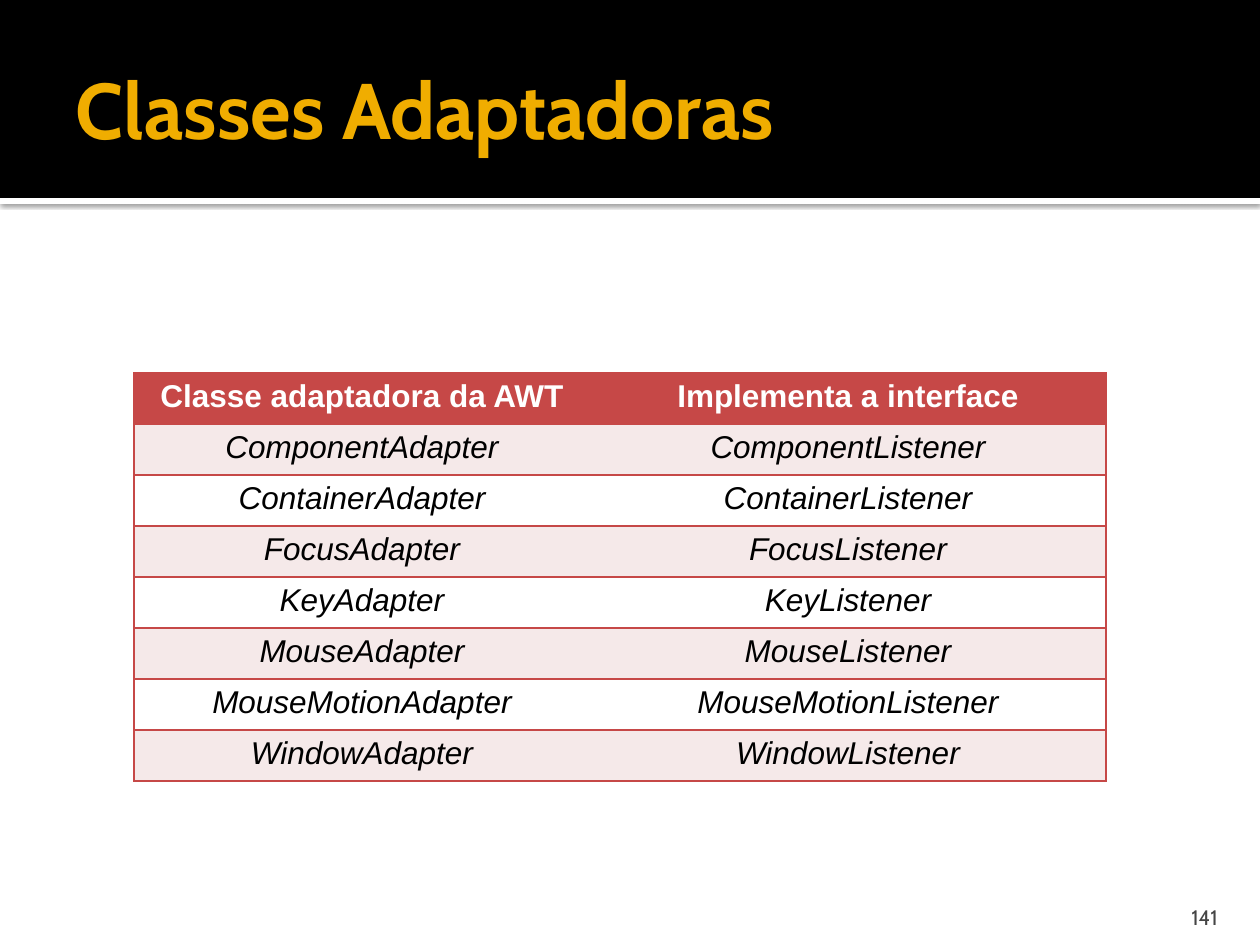
from dataclasses import dataclass

from lxml import etree
from pptx import Presentation
from pptx.dml.color import RGBColor
from pptx.enum.shapes import MSO_SHAPE
from pptx.enum.text import MSO_ANCHOR, MSO_AUTO_SIZE, PP_ALIGN
from pptx.oxml.ns import qn
from pptx.util import Pt

RECTANGLE = MSO_SHAPE.RECTANGLE
MIDDLE, BOTTOM = MSO_ANCHOR.MIDDLE, MSO_ANCHOR.BOTTOM
LEFT, CENTER, RIGHT = PP_ALIGN.LEFT, PP_ALIGN.CENTER, PP_ALIGN.RIGHT
NO_AUTOFIT = MSO_AUTO_SIZE.NONE

EMU_PER_PX = 914400 / 126
TITLE_ONLY_LAYOUT = 5
COLORS = {
    "white": "FFFFFF",
    "black": "000000",
    "gold": "F0AD00",
    "red": "C64847",
    "pink": "F5E9E9",
    "gray": "454545",
}


@dataclass(frozen=True)
class Box:
    left: int
    top: int
    width: int
    height: int

    def emu(self) -> tuple[int, ...]:
        return tuple(px(value) for value in (self.left, self.top, self.width, self.height))


@dataclass(frozen=True)
class TextStyle:
    name: str
    size: int
    color: str
    align: PP_ALIGN
    bold: bool = False
    italic: bool = False


TITLE_STYLE = TextStyle("Cabin", 45, "gold", LEFT, bold=True)
NUMBER_STYLE = TextStyle("Cabin", 12, "gray", RIGHT)
HEADER_STYLE = TextStyle("Arial", 18, "white", CENTER, bold=True)
BODY_STYLE = TextStyle("Arial", 18, "black", CENTER, italic=True)

TABLE_LEFT, TABLE_TOP = 134, 373
COLUMN_WIDTHS = (456, 516)
ROW_HEIGHT = 51
HEADERS = ("Classe adaptadora da AWT", "Implementa a interface")
EVENT_NAMES = ("Component", "Container", "Focus", "Key", "Mouse", "MouseMotion", "Window")


def px(value: int) -> int:
    return round(value * EMU_PER_PX)


def rgb(color: str) -> RGBColor:
    return RGBColor.from_string(COLORS[color])


def write_text(text_frame, text: str, style: TextStyle) -> None:
    paragraph = text_frame.paragraphs[0]
    paragraph.alignment = style.align
    run = paragraph.add_run()
    run.text = text
    values = {"name": style.name, "size": Pt(style.size),
              "bold": style.bold, "italic": style.italic}
    for attribute, value in values.items():
        setattr(run.font, attribute, value)
    run.font.color.rgb = rgb(style.color)


def format_frame(text_frame, anchor: MSO_ANCHOR, margins: tuple[int, ...]) -> None:
    left, top, right, bottom = map(px, margins)
    values = {"word_wrap": True, "auto_size": NO_AUTOFIT, "vertical_anchor": anchor,
              "margin_left": left, "margin_top": top,
              "margin_right": right, "margin_bottom": bottom}
    for attribute, value in values.items():
        setattr(text_frame, attribute, value)


def add_band(slide, box: Box, color: str):
    band = slide.shapes.add_shape(RECTANGLE, *box.emu())
    band.shadow.inherit = False
    band.fill.solid()
    band.fill.fore_color.rgb = rgb(color)
    band.line.fill.background()
    return band


def add_shadow(shape) -> None:
    effects = shape.element.spPr.find(qn("a:effectLst"))
    shadow = etree.SubElement(effects, qn("a:outerShdw"), blurRad=str(Pt(2.5)),
                              dist=str(Pt(0.8)), dir="5400000", rotWithShape="0")
    color = etree.SubElement(shadow, qn("a:srgbClr"), val=COLORS["black"])
    etree.SubElement(color, qn("a:alpha"), val="60000")


def set_borders(cell, sides: str) -> None:
    """Draw the given sides (of "LRTB") in red and hide the others."""
    properties = cell._tc.get_or_add_tcPr()
    for index, side in enumerate("LRTB"):
        line = etree.Element(qn(f"a:ln{side}"), w=str(Pt(1)))
        if side in sides:
            fill = etree.SubElement(line, qn("a:solidFill"))
            etree.SubElement(fill, qn("a:srgbClr"), val=COLORS["red"])
        else:
            etree.SubElement(line, qn("a:noFill"))
        properties.insert(index, line)


def add_adapter_table(slide) -> None:
    rows = [HEADERS] + [(f"{name}Adapter", f"{name}Listener") for name in EVENT_NAMES]
    box = Box(TABLE_LEFT, TABLE_TOP, sum(COLUMN_WIDTHS), ROW_HEIGHT * len(rows))
    table = slide.shapes.add_table(len(rows), len(COLUMN_WIDTHS), *box.emu()).table
    for column, width in zip(table.columns, COLUMN_WIDTHS):
        column.width = px(width)
    for row_index, texts in enumerate(rows):
        table.rows[row_index].height = px(ROW_HEIGHT)
        style = BODY_STYLE if row_index else HEADER_STYLE
        fill = ("white", "pink")[row_index % 2] if row_index else "red"
        for column_index, text in enumerate(texts):
            cell = table.cell(row_index, column_index)
            cell.fill.solid()
            cell.fill.fore_color.rgb = rgb(fill)
            set_borders(cell, "RTB" if column_index else "LTB")
            write_text(cell.text_frame, text, style)


def main() -> None:
    presentation = Presentation()
    presentation.slide_width, presentation.slide_height = px(1260), px(945)
    slide = presentation.slides.add_slide(presentation.slide_layouts[TITLE_ONLY_LAYOUT])
    slide.background.fill.solid()
    slide.background.fill.fore_color.rgb = rgb("white")

    # Header bands
    add_shadow(add_band(slide, Box(0, 198, 1260, 6), "white"))
    add_band(slide, Box(0, 0, 1260, 198), "black")

    # Title, brought in front of the bands
    title = slide.shapes.title
    title.element.getparent().append(title.element)
    title.left, title.top, title.width, title.height = Box(63, 22, 1087, 172).emu()
    format_frame(title.text_frame, MIDDLE, (13, 6, 6, 6))
    write_text(title.text_frame, "Classes Adaptadoras", TITLE_STYLE)

    # Adapter classes and their interfaces
    add_adapter_table(slide)

    # Slide number
    number = slide.shapes.add_textbox(*Box(1130, 892, 101, 38).emu())
    format_frame(number.text_frame, BOTTOM, (13, 6, 13, 0))
    write_text(number.text_frame, "141", NUMBER_STYLE)

    presentation.save("out.pptx")


if __name__ == "__main__":
    main()
